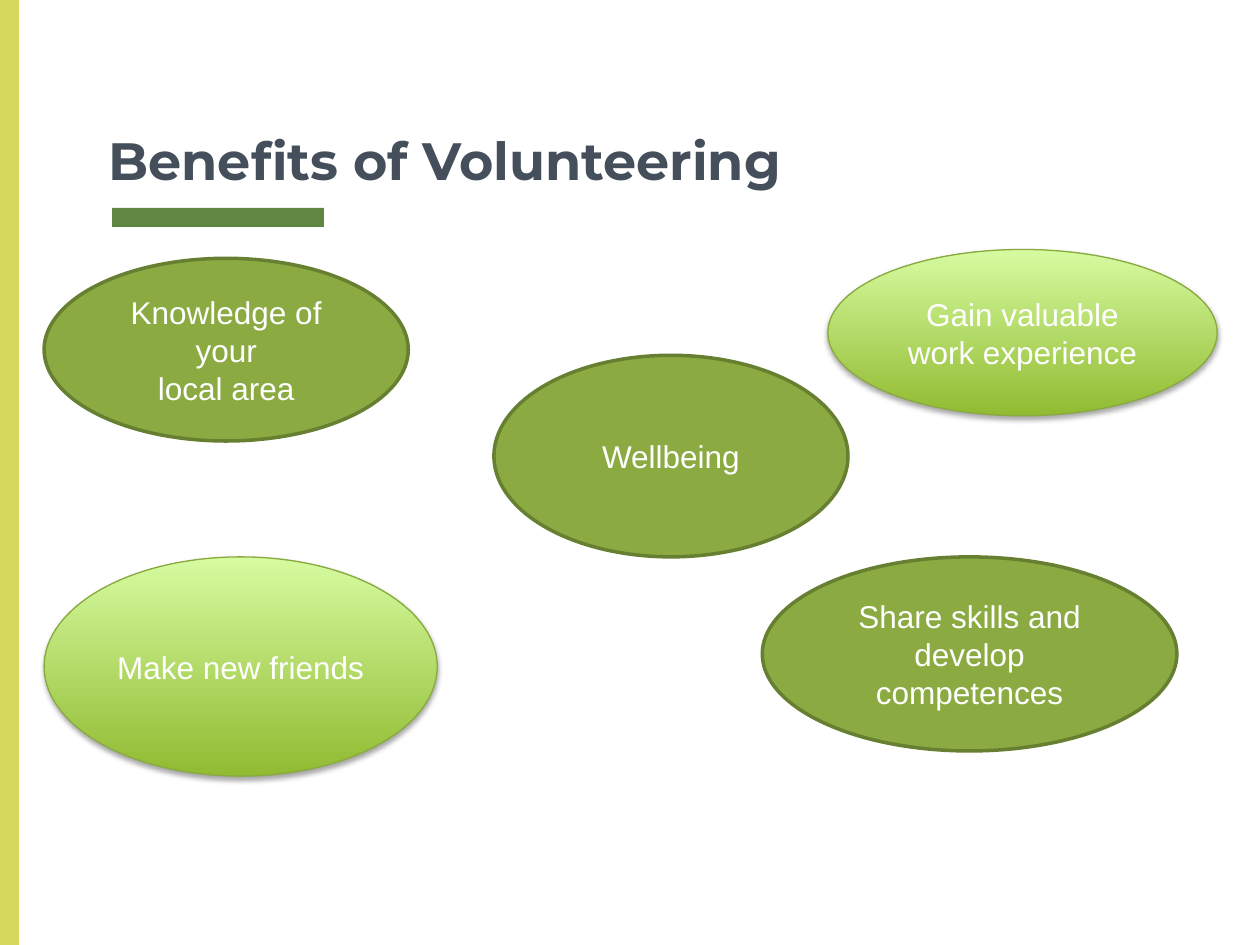
from lxml.etree import SubElement
from pptx import Presentation
from pptx.dml.color import RGBColor
from pptx.enum.shapes import MSO_SHAPE
from pptx.enum.text import MSO_ANCHOR, PP_ALIGN
from pptx.oxml.ns import qn
from pptx.util import Inches, Pt

WHITE = RGBColor(0xFF, 0xFF, 0xFF)
SLATE = RGBColor(0x45, 0x4F, 0x5B)
LIME = RGBColor(0xD5, 0xD8, 0x5A)
GREEN = RGBColor(0x60, 0x86, 0x43)
OLIVE = RGBColor(0x8B, 0xAB, 0x42)
MOSS = RGBColor(0x67, 0x7F, 0x31)
LEAF = RGBColor(0x91, 0xBB, 0x32)
PALE = RGBColor(0xD6, 0xFB, 0xA0)
EDGE = RGBColor(0x89, 0xAA, 0x3E)


class Deck:
    head_font = "Montserrat"
    body_font = "Arial"

    def __init__(self, wide, high):
        self.file = Presentation()
        self.file.slide_width = Inches(wide)
        self.file.slide_height = Inches(high)
        self.slide = self.file.slides.add_slide(self.file.slide_layouts[5])

    def label(self, para, text, font, size, color, bold=False):
        run = para.add_run()
        run.text = text
        run.font.name = font
        run.font.size = Pt(size)
        run.font.bold = bold
        run.font.color.rgb = color

    def title(self, text, box):
        shape = self.slide.shapes.title
        shape.left, shape.top, shape.width, shape.height = map(Inches, box)
        frame = shape.text_frame
        frame.word_wrap = True
        frame.vertical_anchor = MSO_ANCHOR.BOTTOM
        frame.margin_left = frame.margin_right = Inches(0.1)
        frame.margin_top = frame.margin_bottom = Inches(0.1)
        para = frame.paragraphs[0]
        para.alignment = PP_ALIGN.LEFT
        self.label(para, text, self.head_font, 30, SLATE, True)

    def shape(self, kind, box):
        shape = self.slide.shapes.add_shape(kind, *map(Inches, box))
        shape.shadow.inherit = False
        return shape

    def bar(self, box, color):
        shape = self.shape(MSO_SHAPE.RECTANGLE, box)
        shape.fill.solid()
        shape.fill.fore_color.rgb = color
        shape.line.fill.background()

    def bubble(self, lines, box, glossy=False):
        shape = self.shape(MSO_SHAPE.OVAL, box)
        if glossy:
            self.gloss(shape)
        else:
            shape.fill.solid()
            shape.fill.fore_color.rgb = OLIVE
        shape.line.color.rgb = EDGE if glossy else MOSS
        shape.line.width = Pt(0.75 if glossy else 2)
        frame = shape.text_frame
        frame.word_wrap = True
        frame.vertical_anchor = MSO_ANCHOR.MIDDLE
        for i, text in enumerate(lines):
            para = frame.add_paragraph() if i else frame.paragraphs[0]
            para.alignment = PP_ALIGN.CENTER
            self.label(para, text, self.body_font, 18, WHITE)

    def gloss(self, shape):
        shape.fill.gradient()
        shape.fill.gradient_angle = 90
        for stop, color, place in zip(shape.fill.gradient_stops, (LEAF, PALE), (0, 1)):
            stop.color.rgb = color
            stop.position = place
        effects = shape.element.spPr.find(qn("a:effectLst"))
        shade = SubElement(effects, qn("a:outerShdw"), blurRad=str(Pt(3.1)),
                           dist=str(Pt(1.8)), dir="5400000", rotWithShape="0")
        color = SubElement(shade, qn("a:srgbClr"), val="000000")
        SubElement(color, qn("a:alpha"), val="35000")


def main():
    deck = Deck(10, 7.5)
    deck.bar((0.89, 1.65, 1.68, 0.15), GREEN)
    deck.bar((0, 0, 0.15, 7.5), LIME)
    deck.title("Benefits of Volunteering", (0.76, 0.27, 6.36, 1.35))
    deck.bubble(["Wellbeing"], (3.92, 2.82, 2.81, 1.6))
    deck.bubble(["Gain valuable work experience"], (6.57, 1.98, 3.09, 1.32), True)
    deck.bubble(["Knowledge of your", "local area"], (0.35, 2.05, 2.89, 1.45))
    deck.bubble(["Make new friends"], (0.35, 4.42, 3.12, 1.74), True)
    deck.bubble(["Share skills and develop competences"], (6.05, 4.42, 3.29, 1.54))
    deck.file.save("out.pptx")


if __name__ == "__main__":
    main()
